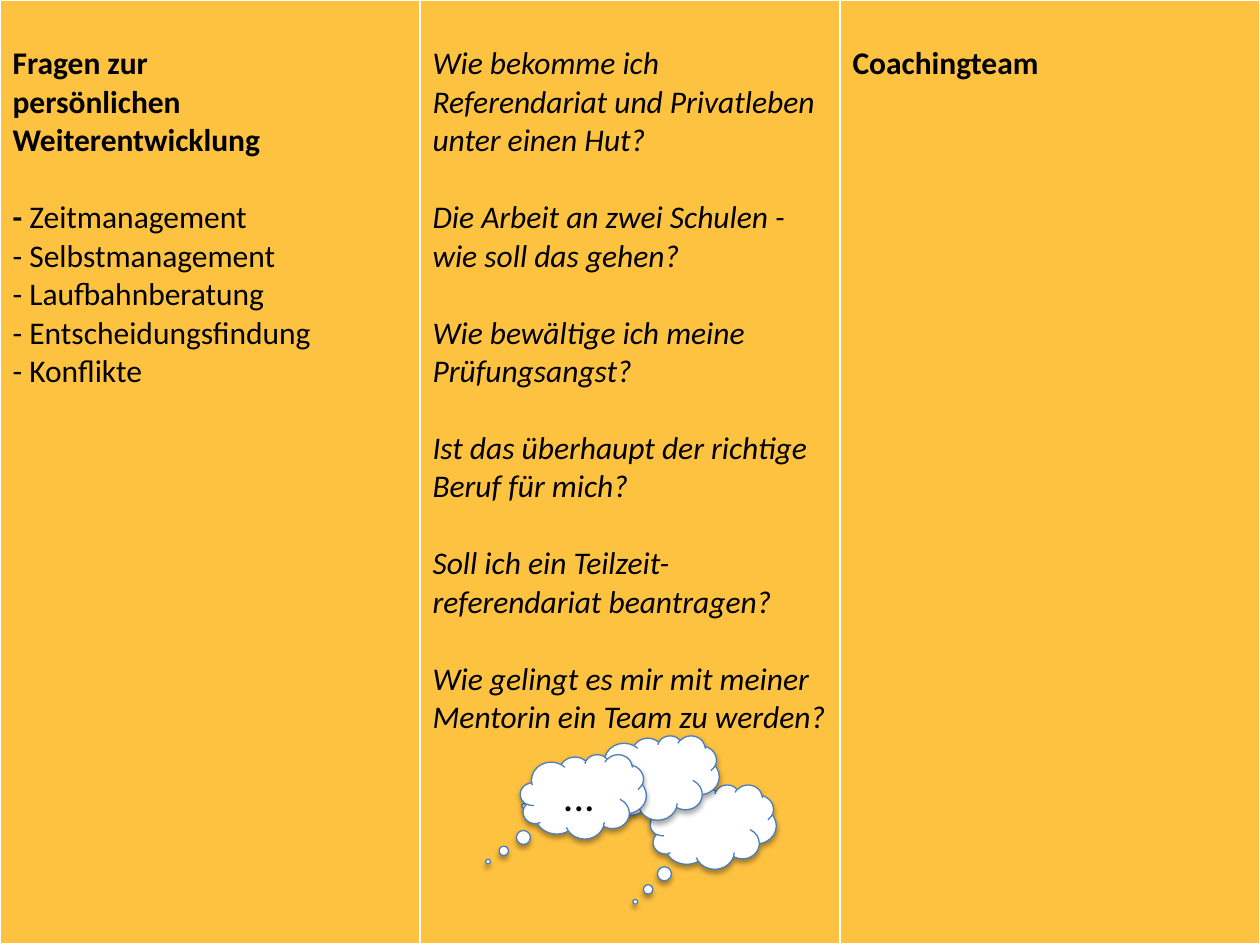
import dataclasses
import typing

import pptx
import pptx.dml.color
import pptx.enum.shapes
import pptx.enum.text
import pptx.oxml
import pptx.oxml.ns
import pptx.util
from lxml import etree

Cm = pptx.util.Cm
Pt = pptx.util.Pt

PAGE_WIDTH, PAGE_HEIGHT = Cm(25.4), Cm(19.05)
BLACK, WHITE, AMBER, BLUE = "000000", "FFFFFF", "FEB312", "4B7EBC"
LINE_HEIGHT = Pt(22)
BORDERS = {"lnL": 1, "lnR": 1, "lnT": 1, "lnB": 3}

PLAIN = {"bold": False, "italic": False}
BOLD = {"bold": True, "italic": False}
ITALIC = {"bold": False, "italic": True}


@dataclasses.dataclass
class Line:
    spans: list[tuple[str, dict]]
    gap: bool = False  # one line of space above


@dataclasses.dataclass
class Cloud:
    left: float
    top: float
    tail: tuple[float, float]
    text: str = ""


TOPICS = ["Selbstmanagement", "Laufbahnberatung", "Entscheidungsfindung", "Konflikte"]
QUESTIONS = [
    "Wie bekomme ich Referendariat und Privatleben unter einen Hut?",
    "Die Arbeit an zwei Schulen - wie soll das gehen?",
    "Wie bewältige ich meine Prüfungsangst?",
    "Ist das überhaupt der richtige Beruf für mich?",
    "Soll ich ein Teilzeit-referendariat beantragen?",
    "Wie gelingt es mir mit meiner Mentorin ein Team zu werden?",
]
COLUMNS = [
    [
        Line([("Fragen zur", BOLD)]),
        Line([("persönlichen Weiterentwicklung", BOLD)]),
        Line([("- ", BOLD), ("Zeitmanagement", PLAIN)], gap=True),
        *[Line([(f"- {topic}", PLAIN)]) for topic in TOPICS],
    ],
    [Line([(question, ITALIC)], gap=index > 0) for index, question in enumerate(QUESTIONS)],
    [Line([("Coachingteam", BOLD)])],
]
CLOUDS = [
    Cloud(13.11, 15.82, (-0.619, 0.888)),
    Cloud(11.96, 14.83, (-1.049, 0.333)),
    Cloud(10.49, 15.21, (-0.756, 0.771), "..."),
]


def colour(value: str) -> pptx.dml.color.RGBColor:
    return pptx.dml.color.RGBColor.from_string(value)


def add_span(para: typing.Any, text: str, size: float, style: dict) -> None:
    span = para.add_run()
    span.text = text
    values = {"name": "Calibri", "size": Pt(size), **style}
    for name, value in values.items():
        setattr(span.font, name, value)
    span.font.color.rgb = colour(BLACK)


def fill_cell(cell: typing.Any, lines: list[Line]) -> None:
    cell.margin_top = Cm(0.13) + LINE_HEIGHT
    for index, line in enumerate(lines):
        para = cell.text_frame.paragraphs[0] if index == 0 else cell.text_frame.add_paragraph()
        if line.gap:
            para.space_before = LINE_HEIGHT
        for text, style in line.spans:
            add_span(para, text, 18, style)

    # Translucent fill and white borders
    cell.fill.solid()
    cell.fill.fore_color.rgb = colour(AMBER)
    properties = cell._tc.get_or_add_tcPr()
    tint = properties.find(".//" + pptx.oxml.ns.qn("a:srgbClr"))
    etree.SubElement(tint, pptx.oxml.ns.qn("a:alpha"), val="80000")
    for index, (side, width) in enumerate(BORDERS.items()):
        border = pptx.oxml.parse_xml(
            f'<a:{side} {pptx.oxml.ns.nsdecls("a")} w="{Pt(width)}"><a:solidFill>'
            f'<a:srgbClr val="{WHITE}"/></a:solidFill></a:{side}>'
        )
        properties.insert(index, border)


def add_cloud(page: typing.Any, cloud: Cloud) -> None:
    shape = page.shapes.add_shape(
        pptx.enum.shapes.MSO_SHAPE.CLOUD_CALLOUT,
        Cm(cloud.left), Cm(cloud.top), Cm(2.54), Cm(1.7),
    )
    for index, value in enumerate(cloud.tail):
        shape.adjustments[index] = value
    shape.fill.solid()
    shape.fill.fore_color.rgb = colour(WHITE)
    shape.line.color.rgb = colour(BLUE)
    shape.line.width = Pt(0.75)

    # Soft shadow straight below
    shape.shadow.inherit = False
    effects = shape._element.spPr.find(pptx.oxml.ns.qn("a:effectLst"))
    effects.append(pptx.oxml.parse_xml(
        f'<a:outerShdw {pptx.oxml.ns.nsdecls("a")} blurRad="{Pt(3.1)}" dist="{Pt(1.8)}" '
        f'dir="5400000" rotWithShape="0"><a:srgbClr val="{BLACK}">'
        '<a:alpha val="35000"/></a:srgbClr></a:outerShdw>'
    ))

    if cloud.text:
        shape.text_frame.vertical_anchor = pptx.enum.text.MSO_ANCHOR.MIDDLE
        para = shape.text_frame.paragraphs[0]
        para.alignment = pptx.enum.text.PP_ALIGN.CENTER
        add_span(para, cloud.text, 24, PLAIN)


def main() -> None:
    deck = pptx.Presentation()
    deck.slide_width, deck.slide_height = PAGE_WIDTH, PAGE_HEIGHT
    page = deck.slides.add_slide(deck.slide_layouts[6])

    # Three equal columns over the whole page
    table = page.shapes.add_table(1, len(COLUMNS), 0, 0, PAGE_WIDTH, PAGE_HEIGHT).table
    for name, value in {"first_row": False, "horz_banding": False}.items():
        setattr(table, name, value)
    for index, lines in enumerate(COLUMNS):
        fill_cell(table.cell(0, index), lines)

    # Thought clouds, from back to front
    for cloud in CLOUDS:
        add_cloud(page, cloud)

    deck.save("out.pptx")


if __name__ == "__main__":
    main()
